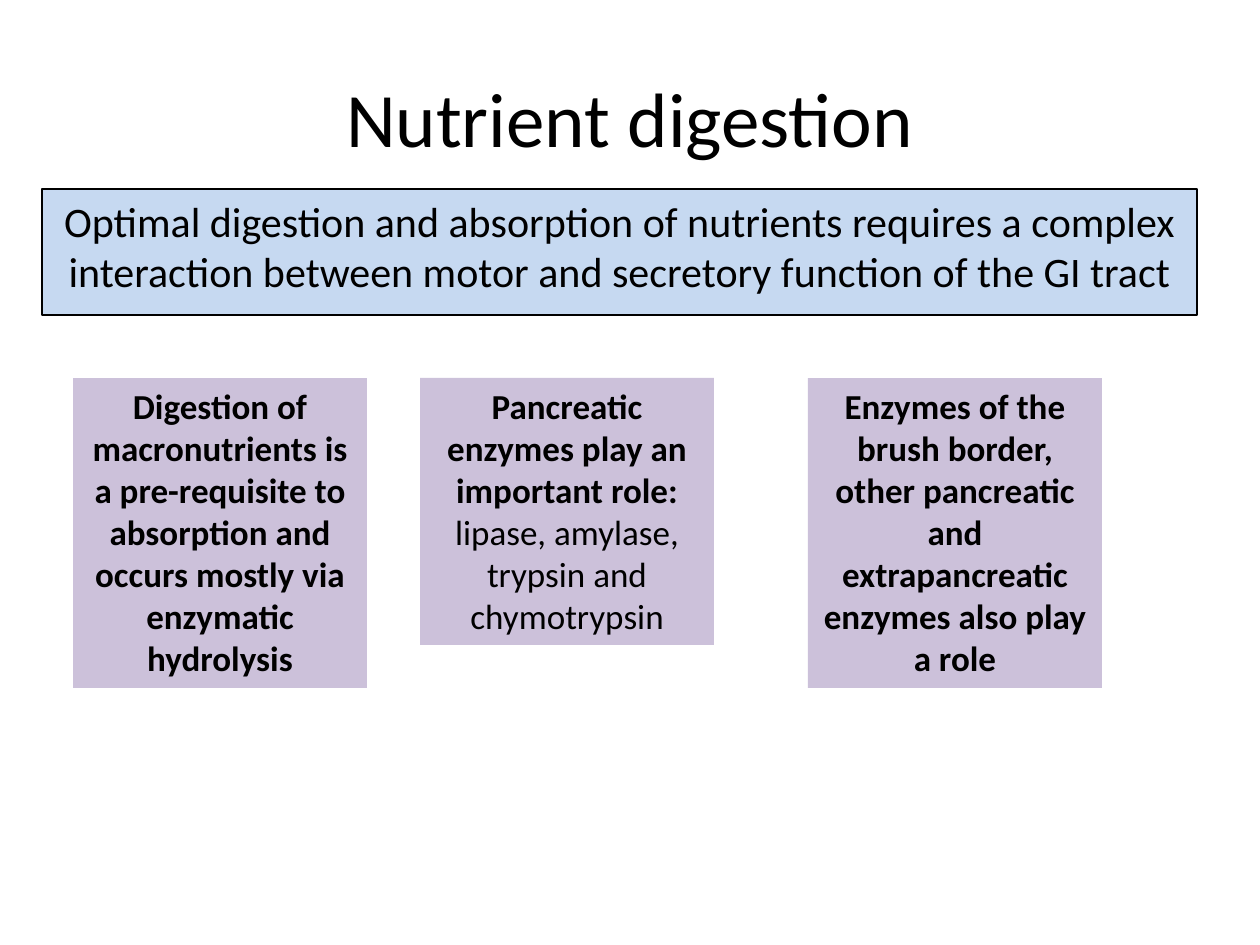
from dataclasses import dataclass

from pptx import Presentation
from pptx.dml.color import RGBColor
from pptx.enum.shapes import MSO_SHAPE
from pptx.enum.text import MSO_ANCHOR, MSO_AUTO_SIZE, PP_ALIGN
from pptx.util import Emu, Pt

PX_PER_INCH = 126


@dataclass(frozen=True)
class Theme:
    font: str = "Calibri"
    ink: str = "000000"
    banner_fill: str = "C6D9F1"
    card_fill: str = "CCC1DA"
    title_size: int = 44
    banner_size: int = 24
    card_size: int = 20


THEME = Theme()


def px(length):
    return Emu(round(length * 914400 / PX_PER_INCH))


def write(paragraph, text, size, bold=False):
    run = paragraph.add_run()
    run.text = text
    run.font.name = THEME.font
    run.font.size = Pt(size)
    run.font.bold = bold
    run.font.color.rgb = RGBColor.from_string(THEME.ink)


def centred_paragraph(frame, anchor=MSO_ANCHOR.TOP):
    frame.word_wrap = True
    frame.vertical_anchor = anchor
    paragraph = frame.paragraphs[0]
    paragraph.alignment = PP_ALIGN.CENTER
    return paragraph


def add_panel(slide, box, fill):
    panel = slide.shapes.add_shape(MSO_SHAPE.RECTANGLE, *map(px, box))
    panel.shadow.inherit = False
    panel.fill.solid()
    panel.fill.fore_color.rgb = RGBColor.from_string(fill)
    panel.line.fill.background()
    return panel


def add_title(slide, box, text):
    title = slide.shapes.add_textbox(*map(px, box))
    heading = centred_paragraph(title.text_frame, MSO_ANCHOR.MIDDLE)
    write(heading, text, size=THEME.title_size)


def add_banner(slide, box, text):
    banner = add_panel(slide, box, THEME.banner_fill)
    banner.line.color.rgb = RGBColor.from_string(THEME.ink)
    banner.line.width = Pt(1.5)
    write(centred_paragraph(banner.text_frame), text, size=THEME.banner_size)


def add_cards(slide, box, cards):
    left, top, card_width, _ = box
    for offset, height, statement, examples in cards:
        card = add_panel(slide, (left + offset, top, card_width, height), THEME.card_fill)
        paragraph = centred_paragraph(card.text_frame)
        card.text_frame.auto_size = MSO_AUTO_SIZE.SHAPE_TO_FIT_TEXT
        write(paragraph, statement, size=THEME.card_size, bold=True)
        if examples:
            write(paragraph, examples, size=THEME.card_size)


def main():
    deck = Presentation()
    deck.slide_width, deck.slide_height = px(1260), px(945)
    slide = deck.slides.add_slide(deck.slide_layouts[6])

    # Title
    add_title(slide, (63, 38, 1134, 157), "Nutrient digestion")

    # Key message
    add_banner(
        slide,
        (42, 189, 1155, 126),
        "Optimal digestion and absorption of nutrients requires a complex "
        "interaction between motor and secretory function of the GI tract",
    )

    # Digestion facts: offset from the left, height, statement, examples
    tall, short = 310, 267
    cards = [
        (0, tall, "Digestion of macronutrients is a pre-requisite to absorption "
                  "and occurs mostly via enzymatic hydrolysis", ""),
        (347, short, "Pancreatic enzymes play an important role: ",
         "lipase, amylase, trypsin and chymotrypsin"),
        (735, tall, "Enzymes of the brush border, other pancreatic and "
                    "extrapancreatic enzymes also play a role", ""),
    ]
    add_cards(slide, (73, 378, 294, tall), cards)

    deck.save("out.pptx")


if __name__ == "__main__":
    main()
